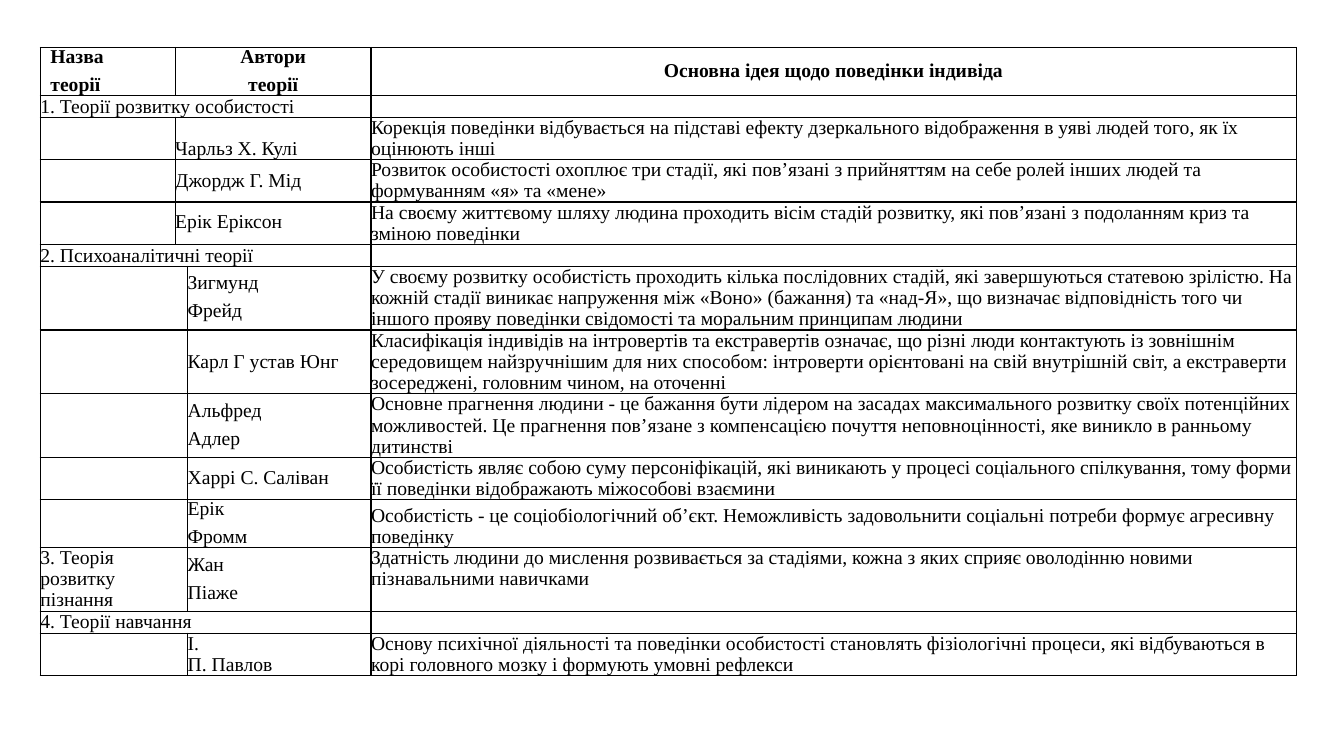
from dataclasses import dataclass

from lxml.etree import SubElement
from pptx import Presentation
from pptx.dml.color import RGBColor
from pptx.enum.text import MSO_ANCHOR as Anchor, PP_ALIGN as Align
from pptx.oxml.ns import qn
from pptx.util import Pt

BLACK = RGBColor(0, 0, 0)
WHITE = RGBColor(255, 255, 255)
FONT = "Times New Roman"
SIZE = 14
TOP, MID, LOW = Anchor.TOP, Anchor.MIDDLE, Anchor.BOTTOM

WIDTHS = (96.4, 8.9, 131, 660.8)
NAMES, ONE, TWO, THREE = 34.2, 15.6, 30.3, 45.5
EARLY, LATE, TITLE = (0, 1, 3), (0, 2, 3), (0, 3)


@dataclass
class Entry:
    lines: tuple = ()
    anchor: Anchor = TOP
    lead: float = 15.1
    gap: float = 0
    bold: bool = False
    align: Align = Align.LEFT
    indent: float = 0


@dataclass
class Row:
    height: float
    starts: tuple
    entries: tuple


EMPTY = Entry(lead=14)


def head(*lines: str, anchor: Anchor = LOW, align: Align = Align.CENTER,
         indent: float = 0) -> Entry:
    return Entry(lines, anchor, 14, 3, True, align, indent)


def pair(first: str, last: str) -> Entry:
    return Entry((first, last), MID, 14, 3)


def name(text: str, anchor: Anchor = MID, lead: float = 15.1) -> Entry:
    return Entry((text,), anchor, lead)


def theme(text: str, anchor: Anchor, lead: float) -> Row:
    return Row(ONE, TITLE, (Entry((text,), anchor, lead), EMPTY))


def theory(height: float, starts: tuple, author: Entry, idea: str,
           anchor: Anchor = LOW, label: Entry = EMPTY) -> Row:
    return Row(height, starts, (label, author, Entry((idea,), anchor)))


ROWS = (
    Row(NAMES, EARLY, (
        head("Назва", "теорії", align=Align.LEFT, indent=7.2),
        head("Автори", "теорії"),
        head("Основна ідея щодо поведінки індивіда", anchor=MID))),
    theme("1. Теорії розвитку особистості", TOP, 15.6),
    theory(TWO, EARLY, name("Чарльз Х. Кулі", LOW, 14.9),
           "Корекція поведінки відбувається на підставі ефекту дзеркального "
           "відображення в уяві людей того, як їх оцінюють інші", TOP),
    theory(TWO, EARLY, name("Джордж Г. Мід"),
           "Розвиток особистості охоплює три стадії, які пов’язані з прийняттям "
           "на себе ролей інших людей та формуванням «я» та «мене»"),
    theory(TWO, EARLY, name("Ерік Еріксон", lead=14),
           "На своєму життєвому шляху людина проходить вісім стадій розвитку, "
           "які пов’язані з подоланням криз та зміною поведінки"),
    theme("2. Психоаналітичні теорії", LOW, 15.3),
    theory(THREE, LATE, pair("Зигмунд", "Фрейд"),
           "У своєму розвитку особистість проходить кілька послідовних стадій, "
           "які завершуються статевою зрілістю. На кожній стадії виникає "
           "напруження між «Воно» (бажання) та «над-Я», що визначає відповідність "
           "того чи іншого прояву поведінки свідомості та моральним принципам людини"),
    theory(THREE, LATE, name("Карл Г устав Юнг"),
           "Класифікація індивідів на інтровертів та екстравертів означає, що "
           "різні люди контактують із зовнішнім середовищем найзручнішим для них "
           "способом: інтроверти орієнтовані на свій внутрішній світ, а екстраверти "
           "зосереджені, головним чином, на оточенні"),
    theory(THREE, LATE, pair("Альфред", "Адлер"),
           "Основне прагнення людини - це бажання бути лідером на засадах "
           "максимального розвитку своїх потенційних можливостей. Це прагнення "
           "пов’язане з компенсацією почуття неповноцінності, яке виникло в "
           "ранньому дитинстві"),
    theory(TWO, LATE, name("Харрі С. Саліван"),
           "Особистість являє собою суму персоніфікацій, які виникають у процесі "
           "соціального спілкування, тому форми її поведінки відображають "
           "міжособові взаємини", TOP),
    theory(NAMES, LATE, pair("Ерік", "Фромм"),
           "Особистість - це соціобіологічний об’єкт. Неможливість задовольнити "
           "соціальні потреби формує агресивну поведінку"),
    theory(THREE, LATE, pair("Жан", "Піаже"),
           "Здатність людини до мислення розвивається за стадіями, кожна з яких "
           "сприяє оволодінню новими пізнавальними навичками", TOP,
           Entry(("3. Теорія розвитку пізнання",))),
    theme("4. Теорії навчання", LOW, 14),
    theory(TWO, LATE, Entry(("І.", "П. Павлов"), LOW),
           "Основу психічної діяльності та поведінки особистості становлять "
           "фізіологічні процеси, які відбуваються в корі головного мозку і "
           "формують умовні рефлекси"),
)


def frame(cell) -> None:
    cell.margin_left = cell.margin_right = Pt(0)
    cell.margin_top = cell.margin_bottom = Pt(0)
    props = cell._tc.get_or_add_tcPr()
    for side in ("lnL", "lnR", "lnT", "lnB"):
        line = SubElement(props, qn(f"a:{side}"), w=str(Pt(1)))
        paint = SubElement(line, qn("a:solidFill"))
        SubElement(paint, qn("a:srgbClr"), val=str(BLACK))
    cell.fill.solid()
    cell.fill.fore_color.rgb = WHITE
    blank = cell.text_frame.paragraphs[0]
    blank.line_spacing = Pt(SIZE)
    SubElement(blank._p, qn("a:endParaRPr"), sz="1000")


def write(cell, entry: Entry) -> None:
    cell.vertical_anchor = entry.anchor
    box = cell.text_frame
    for index, text in enumerate(entry.lines):
        para = box.add_paragraph() if index else box.paragraphs[0]
        para.alignment = entry.align
        para.line_spacing = Pt(entry.lead)
        if index:
            para.space_before = Pt(entry.gap)
        if index < len(entry.lines) - 1:
            para.space_after = Pt(entry.gap)
        if entry.indent:
            props = para._p.get_or_add_pPr()
            props.set("marL", str(Pt(entry.indent)))
            props.set("indent", "0")
        run = para.add_run()
        run.text = text
        font = run.font
        font.name, font.size, font.bold = FONT, Pt(SIZE), entry.bold
        font.color.rgb = BLACK


def fill(table, index: int, row: Row) -> None:
    table.rows[index].height = Pt(row.height)
    for cell in table.rows[index].cells:
        frame(cell)
    ends = (*row.starts[1:], len(WIDTHS))
    for start, end, entry in zip(row.starts, ends, row.entries):
        cell = table.cell(index, start)
        if end - start > 1:
            cell.merge(table.cell(index, end - 1))
        write(cell, entry)


def main() -> None:
    deck = Presentation()
    deck.slide_width, deck.slide_height = Pt(960), Pt(540)
    slide = deck.slides.add_slide(deck.slide_layouts[6])
    high = sum(row.height for row in ROWS)
    table = slide.shapes.add_table(len(ROWS), len(WIDTHS), Pt(28.8), Pt(34),
                                   Pt(sum(WIDTHS)), Pt(high)).table
    table.first_row = table.horz_banding = False
    for column, width in zip(table.columns, WIDTHS):
        column.width = Pt(width)
    for index, row in enumerate(ROWS):
        fill(table, index, row)
    deck.save("out.pptx")


if __name__ == "__main__":
    main()
